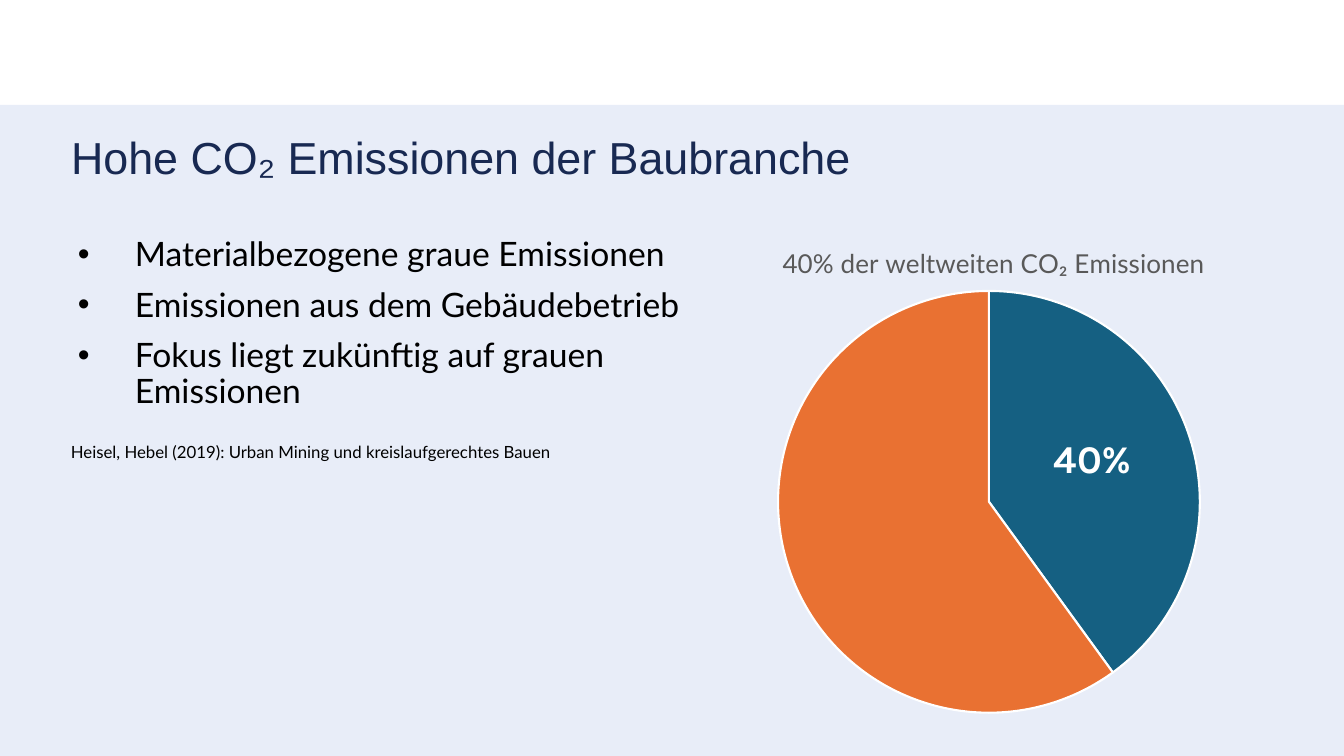
from lxml import etree
from pptx import Presentation
from pptx import util as u
from pptx.chart.data import CategoryChartData
from pptx.dml.color import RGBColor
from pptx.enum import chart as ch, shapes, text
from pptx.oxml import parse_xml
from pptx.oxml.ns import nsdecls, qn

# Content
TITLE = "Hohe CO₂ Emissionen der Baubranche"
POINTS = [
    "Materialbezogene graue Emissionen",
    "Emissionen aus dem Gebäudebetrieb",
    "Fokus liegt zukünftig auf grauen Emissionen",
]
CITATION = "Heisel, Hebel (2019): Urban Mining und kreislaufgerechtes Bauen"
SHARE_TITLE = "40% der weltweiten CO₂ Emissionen"
SHARE_LABEL = "40%"

NAVY = RGBColor(0x18, 0x29, 0x52)
PALE = RGBColor(0xE8, 0xED, 0xF8)
TEAL = RGBColor(0x15, 0x60, 0x82)
ORANGE = RGBColor(0xE9, 0x71, 0x32)
GREY = RGBColor(0x59, 0x59, 0x59)
BLACK = RGBColor(0, 0, 0)
WHITE = RGBColor(255, 255, 255)
SHARES = [("1", 40, TEAL), ("2", 60, ORANGE)]

# Places in px: left, top, width, height
SLIDE = (1344, 756)
BAND = (0, 105, 1344, 651)
TITLE_BOX = (61, 131, 1221, 76)
POINTS_BOX = (68, 233, 643, 451)
CHART_BOX = (672, 221, 634, 507)
PIE_BOX = (778, 291, 422, 422)
SHARE_TITLE_AT = (778, 240)
LABEL_BOX = (1044, 429, 101, 57)
CITATION_BOX = (61, 437, 573, 30)
INDENT = 57


def px(n):
    return u.Emu(round(n * 914400 / 100.8))


def box(place):
    return [px(n) for n in place]


def style(font, name, size, color, bold=False):
    font.name, font.size, font.bold = name, u.Pt(size), bold
    font.color.rgb = color


def add_run(paragraph, words, *look):
    run = paragraph.add_run()
    run.text = words
    style(run.font, *look)


def add_text(place):
    frame = slide.shapes.add_textbox(*box(place)).text_frame
    frame.word_wrap = True
    return frame


def layout_xml(place):
    """Manual chart layout, as fractions of the chart box."""
    left, top, width, height = CHART_BOX
    parts = {"x": (place[0] - left) / width, "y": (place[1] - top) / height}
    if len(place) == 4:
        parts.update(w=place[2] / width, h=place[3] / height)
    target = '<c:layoutTarget val="inner"/>' if len(place) == 4 else ""
    modes = '<c:xMode val="edge"/><c:yMode val="edge"/>'
    values = "".join(f'<c:{k} val="{v:.3f}"/>' for k, v in parts.items())
    return parse_xml(f'<c:layout {nsdecls("c")}><c:manualLayout>{target}{modes}{values}'
                     "</c:manualLayout></c:layout>")


prs = Presentation()
prs.slide_width, prs.slide_height = box(SLIDE)
slide = prs.slides.add_slide(prs.slide_layouts[5])

# Background band, behind the title
band = slide.shapes.add_shape(shapes.MSO_SHAPE.RECTANGLE, *box(BAND))
band.shadow.inherit = False
band.fill.solid()
band.fill.fore_color.rgb = PALE
band.line.fill.background()
slide.shapes._spTree.insert(2, band._element)

# Title
title = slide.shapes.title
title.left, title.top, title.width, title.height = box(TITLE_BOX)
title.text_frame.vertical_anchor = text.MSO_ANCHOR.TOP
heading = title.text_frame.paragraphs[0]
heading.alignment = text.PP_ALIGN.LEFT
heading.line_spacing = 0.9
add_run(heading, TITLE, "Arial", 32, NAVY)

# Bullet points
points = add_text(POINTS_BOX)
for i, words in enumerate(POINTS):
    item = points.add_paragraph() if i else points.paragraphs[0]
    props = item._p.get_or_add_pPr()
    props.set("marL", str(px(INDENT)))
    props.set("indent", str(-px(INDENT)))
    etree.SubElement(props, qn("a:buFont"), typeface="Arial")
    etree.SubElement(props, qn("a:buChar"), char="•")
    item.line_spacing = 0.9
    if i:
        item.space_before = u.Pt(10)
    add_run(item, words, "Lato", 24, BLACK)

# Pie chart
data = CategoryChartData()
data.categories = [name for name, _, _ in SHARES]
data.add_series("Series 1", [value for _, value, _ in SHARES])
pie = slide.shapes.add_chart(ch.XL_CHART_TYPE.PIE, *box(CHART_BOX), data).chart
style(pie.font, "Karla", 10, BLACK)
pie.has_legend = False
pie.has_title = True
share_title = pie.chart_title
add_run(share_title.text_frame.paragraphs[0], SHARE_TITLE, "Lato", 18.6, GREY)
share_title.include_in_layout = False
for old in share_title._element.findall(qn("c:layout")):
    share_title._element.remove(old)
share_title._element.find(qn("c:tx")).addnext(layout_xml(SHARE_TITLE_AT))

plot_area = pie._chartSpace.chart.plotArea
for old in plot_area.findall(qn("c:layout")):
    plot_area.remove(old)
plot_area.insert(0, layout_xml(PIE_BOX))

plot = pie.plots[0]
plot.vary_by_categories = True
for i, (_, _, color) in enumerate(SHARES):
    wedge = plot.series[0].points[i].format
    wedge.fill.solid()
    wedge.fill.fore_color.rgb = color
    wedge.line.color.rgb = WHITE
    wedge.line.width = u.Pt(1.5)

# Share label and citation
for place, words, look in [
    (LABEL_BOX, SHARE_LABEL, ("Karla", 28, WHITE, True)),
    (CITATION_BOX, CITATION, ("Lato", 12, BLACK)),
]:
    add_run(add_text(place).paragraphs[0], words, *look)

prs.save("out.pptx")
